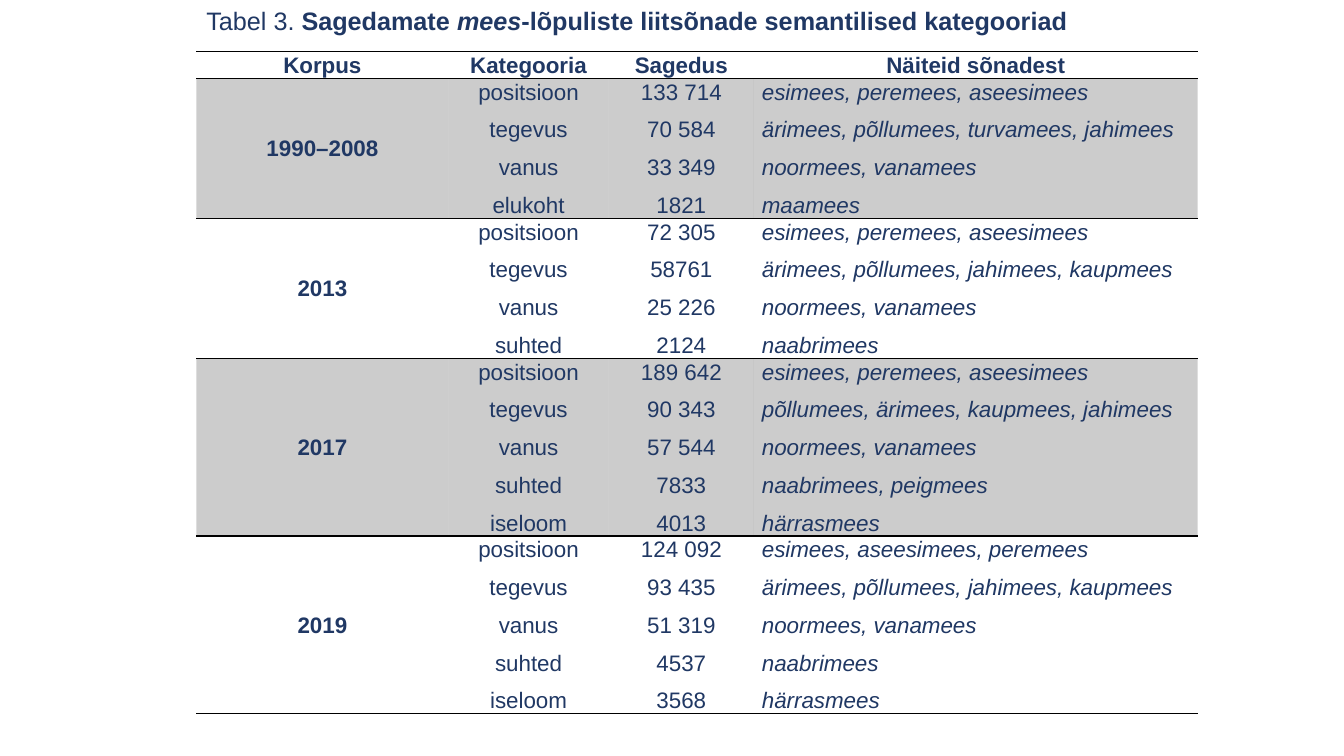
from dataclasses import dataclass

from lxml.etree import SubElement
from pptx import Presentation
from pptx.dml.color import RGBColor
from pptx.enum.text import MSO_ANCHOR, MSO_AUTO_SIZE, PP_ALIGN
from pptx.oxml import parse_xml
from pptx.oxml.ns import nsdecls, qn
from pptx.slide import Slide
from pptx.table import Table, _Cell
from pptx.util import Cm, Pt

NAVY = RGBColor(0x20, 0x38, 0x64)
BLACK = RGBColor(0, 0, 0)
FONT = "Arial"
PLAIN_STYLE = "{2D5ABB26-0587-4C30-8999-92F81FD0307C}"
LEFT = Cm(4.95)
COLUMN_WIDTHS = (6.35, 4.04, 3.66, 11.18)
HEADER_HEIGHT = 0.61
HEADERS = ("Korpus", "Kategooria", "Sagedus", "Näiteid sõnadest")


@dataclass(frozen=True)
class Category:
    name: str
    frequency: str
    examples: str


@dataclass(frozen=True)
class Corpus:
    period: str
    height: float
    shaded: bool
    categories: tuple[Category, ...]


CORPORA = (
    Corpus("1990–2008", 3.33, True, (
        Category("positsioon", "133 714", "esimees, peremees, aseesimees"),
        Category("tegevus", "70 584", "ärimees, põllumees, turvamees, jahimees"),
        Category("vanus", "33 349", "noormees, vanamees"),
        Category("elukoht", "1821", "maamees"),
    )),
    Corpus("2013", 3.33, False, (
        Category("positsioon", "72 305", "esimees, peremees, aseesimees"),
        Category("tegevus", "58761", "ärimees, põllumees, jahimees, kaupmees"),
        Category("vanus", "25 226", "noormees, vanamees"),
        Category("suhted", "2124", "naabrimees"),
    )),
    Corpus("2017", 4.27, True, (
        Category("positsioon", "189 642", "esimees, peremees, aseesimees"),
        Category("tegevus", "90 343", "põllumees, ärimees, kaupmees, jahimees"),
        Category("vanus", "57 544", "noormees, vanamees"),
        Category("suhted", "7833", "naabrimees, peigmees"),
        Category("iseloom", "4013", "härrasmees"),
    )),
    Corpus("2019", 4.22, False, (
        Category("positsioon", "124 092", "esimees, aseesimees, peremees"),
        Category("tegevus", "93 435", "ärimees, põllumees, jahimees, kaupmees"),
        Category("vanus", "51 319", "noormees, vanamees"),
        Category("suhted", "4537", "naabrimees"),
        Category("iseloom", "3568", "härrasmees"),
    )),
)


def add_title(s: Slide) -> None:
    sp = s.shapes.add_textbox(LEFT, 0, Cm(25.68), Cm(1.02))
    tf = sp.text_frame
    tf.word_wrap = True
    tf.auto_size = MSO_AUTO_SIZE.SHAPE_TO_FIT_TEXT
    p = tf.paragraphs[0]
    p.font.name = FONT
    p.font.size = Pt(18)
    p.font.color.rgb = NAVY
    for text, bold, italic in (
        ("Tabel 3. ", False, False),
        ("Sagedamate ", True, False),
        ("mees", True, True),
        ("-lõpuliste liitsõnade semantilised kategooriad", True, False),
    ):
        r = p.add_run()
        r.text = text
        r.font.bold = bold
        r.font.italic = italic


def write_cell(cell: _Cell, lines: tuple[str, ...], bold: bool = False,
               italic: bool = False) -> None:
    cell.margin_left = cell.margin_right = Cm(0.2)
    cell.margin_top = cell.margin_bottom = 0
    tf = cell.text_frame
    tf.text = "\n".join(lines)
    for p in tf.paragraphs:
        p.alignment = PP_ALIGN.LEFT if italic else PP_ALIGN.CENTER
        p.line_spacing = 1.07
        p.space_after = Pt(8)
        p.font.name = FONT
        p.font.size = Pt(16)
        p.font.color.rgb = NAVY
        p.font.bold = bold
        p.font.italic = italic


def style_cell(cell: _Cell, shaded: bool) -> None:
    tc_pr = cell._tc.get_or_add_tcPr()
    if shaded:
        cell.fill.solid()
        cell.fill.fore_color.rgb = BLACK
        SubElement(tc_pr.find(".//" + qn("a:srgbClr")), qn("a:alpha"), val="20000")
    else:
        cell.fill.background()
    for side in ("lnB", "lnT"):
        tc_pr.insert(0, parse_xml(
            f'<a:{side} {nsdecls("a")} w="{Pt(1)}"><a:solidFill>'
            f'<a:srgbClr val="{BLACK}"/></a:solidFill></a:{side}>'))


def fill_corpus(table: Table, row: int, corpus: Corpus) -> None:
    period, names, frequencies, examples = table.rows[row].cells
    write_cell(period, (corpus.period,), bold=True)
    period.vertical_anchor = MSO_ANCHOR.MIDDLE
    write_cell(names, tuple(c.name for c in corpus.categories))
    write_cell(frequencies, tuple(c.frequency for c in corpus.categories))
    write_cell(examples, tuple(c.examples for c in corpus.categories), italic=True)
    for cell in table.rows[row].cells:
        style_cell(cell, corpus.shaded)


def add_corpus_table(s: Slide) -> None:
    heights = (HEADER_HEIGHT, *(corpus.height for corpus in CORPORA))
    table = s.shapes.add_table(
        len(heights), len(HEADERS), LEFT, Cm(1.3),
        Cm(sum(COLUMN_WIDTHS)), Cm(sum(heights))).table
    table.horz_banding = False
    table._tbl.tblPr.find(qn("a:tableStyleId")).text = PLAIN_STYLE
    for column, width in zip(table.columns, COLUMN_WIDTHS):
        column.width = Cm(width)
    for row, height in zip(table.rows, heights):
        row.height = Cm(height)
    for cell, header in zip(table.rows[0].cells, HEADERS):
        write_cell(cell, (header,), bold=True)
        style_cell(cell, False)
    for row, corpus in enumerate(CORPORA, start=1):
        fill_corpus(table, row, corpus)


def main() -> None:
    prs = Presentation()
    prs.slide_width = Cm(33.87)
    prs.slide_height = Cm(19.05)
    s = prs.slides.add_slide(prs.slide_layouts[6])
    add_corpus_table(s)
    add_title(s)
    prs.save("out.pptx")


if __name__ == "__main__":
    main()
